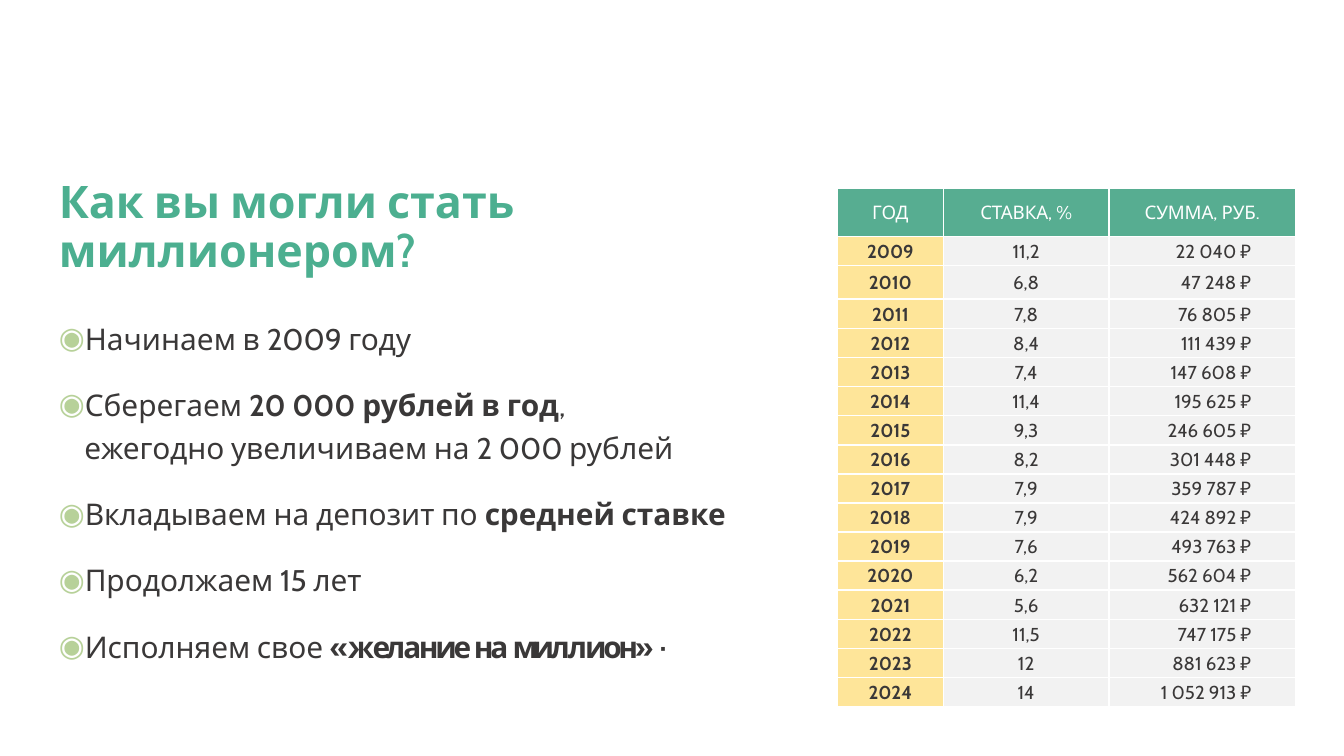
from copy import deepcopy

from lxml import etree
from pptx import Presentation
from pptx import util as u
from pptx.dml import color
from pptx.enum import text
from pptx.oxml import ns

TITLE = "Как вы могли стать миллионером?"
STEPS = [
    [("Начинаем в 2009 году", False)],
    [("Сберегаем ", False), ("20 000 рублей в год", True), (", ", False),
     ("\n", False), ("ежегодно увеличиваем на 2 000 рублей", False)],
    [("Вкладываем на депозит по ", False), ("средней ставке", True)],
    [("Продолжаем 15 лет", False)],
    [("Исполняем свое ", False), ("«желание на миллион» ☺", True)],
]
HEADINGS = ["ГОД", "СТАВКА, %", "СУММА, РУБ."]
FIRST_YEAR = 2009
RATES = ["11,2", "6,8", "7,8", "8,4", "7,4", "11,4", "9,3", "8,2",
         "7,9", "7,9", "7,6", "6,2", "5,6", "11,5", "12", "14"]
SUMS = ["22 040", "47 248", "76 805", "111 439", "147 608", "195 625",
        "246 605", "301 448", "359 787", "424 892", "493 763", "562 604",
        "632 121", "747 175", "881 623", "1 052 913"]


def rgb(value):
    return color.RGBColor.from_string(value)


def apply(target, values):
    for name, value in values.items():
        setattr(target, name, value)


def element(parent, tag, **attributes):
    return etree.SubElement(parent, ns.qn(tag), attributes)


class SlideWriter:
    """Holds the style and the current slide, and adds each kind of element."""

    font = "Cabin"
    ink = "3A3838"
    white = "FFFFFF"
    title_green = "4CAF90"
    bullet_green = "B7D199"
    header_green = "57AD91"
    year_yellow = "FEE599"
    cell_grey = "F2F2F2"

    def __init__(self, slide):
        self.slide = slide

    def span(self, para, words, size, tint, bold=False):
        span = para.add_run()
        span.text = words
        apply(span.font, {"name": self.font, "size": u.Pt(size), "bold": bold})
        span.font.color.rgb = rgb(tint)
        return span

    def frame(self, left, top, width, height):
        box = self.slide.shapes.add_textbox(*map(u.Inches, (left, top, width, height)))
        apply(box.text_frame, {"word_wrap": True, "vertical_anchor": text.MSO_ANCHOR.TOP})
        return box.text_frame

    def title(self, words, *place):
        para = self.frame(*place).paragraphs[0]
        para.line_spacing = 0.9
        self.span(para, words, 24, self.title_green, True)

    def bullets(self, items, *place):
        frame = self.frame(*place)
        for index, item in enumerate(items):
            para = frame.add_paragraph() if index else frame.paragraphs[0]
            self.bullet(para)
            apply(para, {"line_spacing": 1.2, "space_before": u.Pt(12.5 if index else 0)})
            for words, bold in item:
                if words == "\n":
                    para.add_line_break()
                    para._p[-1].append(deepcopy(span._r.rPr))
                else:
                    span = self.span(para, words, 16, self.ink, bold)

    def bullet(self, para):
        props = para._p.get_or_add_pPr()
        indent = u.Inches(0.19)
        props.set("marL", str(indent))
        props.set("indent", str(-indent))
        element(element(props, "a:buClr"), "a:srgbClr", val=self.bullet_green)
        element(props, "a:buFont", typeface=self.font)
        element(props, "a:buChar", char="◉")

    def table(self, rows, left, top, widths, heights):
        size = sum(widths), sum(heights)
        table = self.slide.shapes.add_table(
            len(rows), len(widths), *map(u.Inches, (left, top, *size))).table
        for column, width in zip(table.columns, widths):
            column.width = u.Inches(width)
        for index, (row, height, values) in enumerate(zip(table.rows, heights, rows)):
            row.height = u.Inches(height)
            for place, (cell, words) in enumerate(zip(row.cells, values)):
                self.cell(cell, words, index == 0, place)

    def cell(self, cell, words, header, place):
        year, amount = place == 0 and not header, place == 2 and not header
        edge = u.Inches(0.01)
        apply(cell, {
            "margin_left": edge, "margin_top": edge, "margin_bottom": 0,
            "margin_right": u.Inches(0.33) if amount else edge,
            "vertical_anchor": text.MSO_ANCHOR.MIDDLE})
        for side in "LRTB":
            line = element(cell._tc.get_or_add_tcPr(), f"a:ln{side}", w=str(u.Pt(1)))
            element(element(line, "a:solidFill"), "a:srgbClr", val=self.white)
        fill = self.header_green if header else self.year_yellow if year else self.cell_grey
        cell.fill.solid()
        cell.fill.fore_color.rgb = rgb(fill)
        para = cell.text_frame.paragraphs[0]
        para.alignment = text.PP_ALIGN.RIGHT if amount else text.PP_ALIGN.CENTER
        self.span(para, words, 10, self.white if header else self.ink, year)


def main():
    deck = Presentation()
    width = u.Inches(10)
    apply(deck, {"slide_width": width, "slide_height": width * 9 // 16})
    page = SlideWriter(deck.slides.add_slide(deck.slide_layouts[6]))
    page.title(TITLE, 0.34, 1.29, 5.7, 0.88)
    page.bullets(STEPS, 0.34, 2.28, 5.9, 3.22)

    rows = [HEADINGS] + [
        (str(year), rate, f"{amount} ₽")
        for year, (rate, amount) in enumerate(zip(RATES, SUMS), FIRST_YEAR)]
    header, tall, total = 0.36, 0.25, 3.86
    plain = (total - header - tall) / (len(RATES) - 1)
    heights = [header, plain, tall] + [plain] * (len(RATES) - 2)
    page.table(rows, 6.23, 1.4, [0.79, 1.23, 1.39], heights)
    deck.save("out.pptx")


if __name__ == "__main__":
    main()
